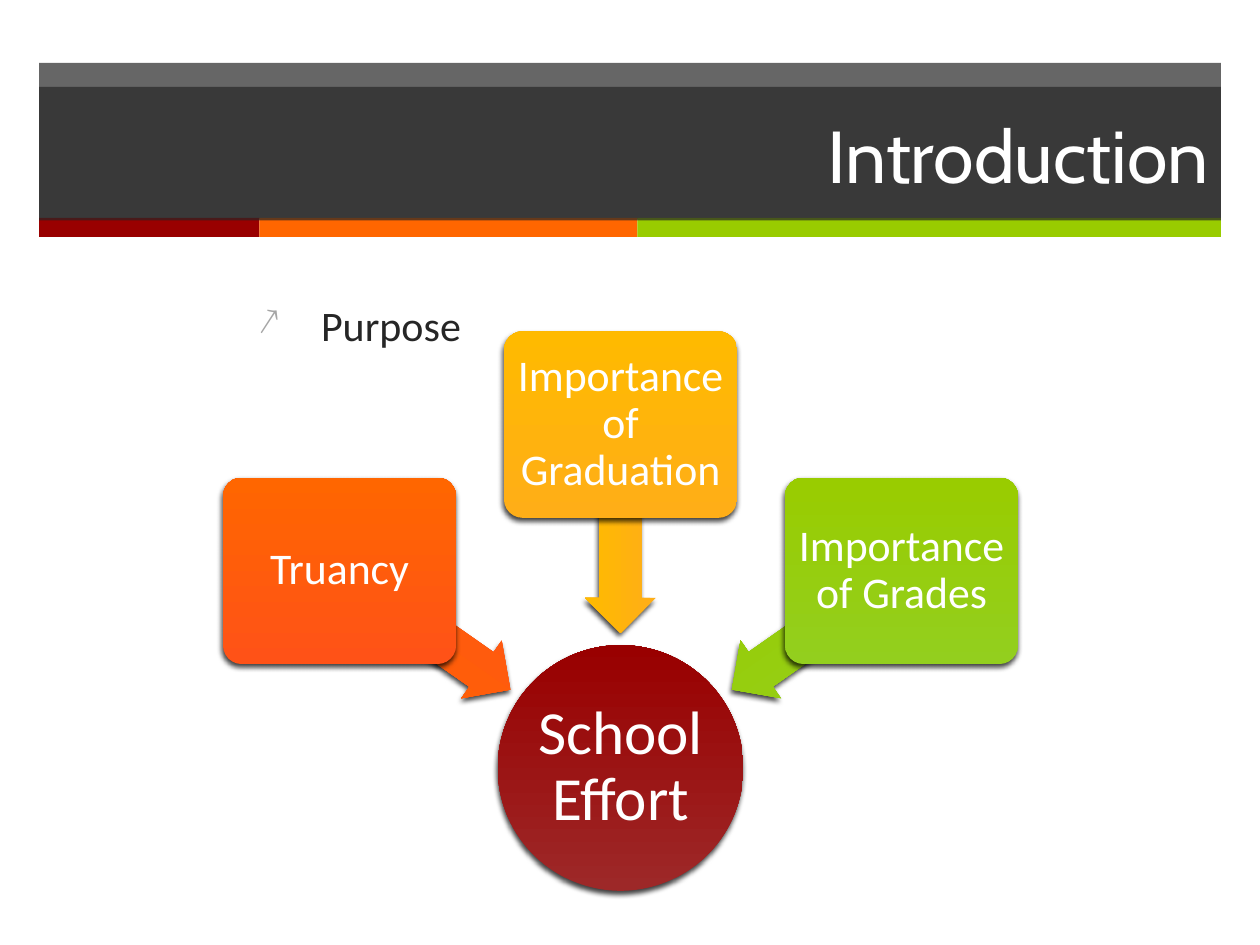
from pptx import Presentation
from pptx.dml.color import RGBColor
from pptx.enum.shapes import MSO_SHAPE
from pptx.enum.text import MSO_ANCHOR, PP_ALIGN
from pptx.oxml import parse_xml
from pptx.oxml.ns import nsdecls
from pptx.util import Inches, Pt

RECT, ROUND = MSO_SHAPE.RECTANGLE, MSO_SHAPE.ROUNDED_RECTANGLE
ELLIPSE, ARROW = MSO_SHAPE.OVAL, MSO_SHAPE.LEFT_ARROW
MIDDLE = MSO_ANCHOR.MIDDLE
CENTER, RIGHT = PP_ALIGN.CENTER, PP_ALIGN.RIGHT
rgb = RGBColor.from_string

prs = Presentation()
prs.slide_width, prs.slide_height = Inches(10), Inches(7.5)
s = prs.slides.add_slide(prs.slide_layouts[6])


def add_shape(kind, x, y, w, h, colors, alpha=None):
    sp = s.shapes.add_shape(kind, Inches(x), Inches(y), Inches(w), Inches(h))
    sp.shadow.inherit = False
    sp.line.fill.background()
    if len(colors) == 1:
        sp.fill.solid()
        sp.fill.fore_color.rgb = rgb(colors[0])
        if alpha:
            color = sp.fill._xPr.solidFill[0]
            color.append(parse_xml(f'<a:alpha {nsdecls("a")} val="{alpha * 1000}"/>'))
    else:
        sp.fill.gradient()
        sp.fill.gradient_angle = 90
        for stop, value in zip(sp.fill.gradient_stops, colors):
            stop.color.rgb = rgb(value)
        effects = sp._element.spPr.find("{*}effectLst")
        effects.append(parse_xml(
            f'<a:outerShdw {nsdecls("a")} blurRad="{Pt(3)}" dist="{Pt(2)}" dir="6600000"'
            ' rotWithShape="0"><a:srgbClr val="000000"><a:alpha val="75000"/>'
            '</a:srgbClr></a:outerShdw>'))
    return sp


def add_text(sp, text, size, font, color, align, inset=None):
    tf = sp.text_frame
    tf.word_wrap = True
    if inset is not None:
        tf.margin_left = tf.margin_right = tf.margin_top = tf.margin_bottom = Inches(inset)
        tf.paragraphs[0].line_spacing = 0.9
    p = tf.paragraphs[0]
    p.alignment = align
    r = p.add_run()
    r.text = text
    r.font.size = Pt(size)
    r.font.name = font
    r.font.color.rgb = rgb(color)


add_shape(RECT, 0.31, 0.5, 9.38, 1.24, ["262626"], 70)
x = 0.31
for width, color in [(1.75, "990000"), (3, "FF6600"), (4.63, "99CC00")]:
    add_shape(RECT, x, 1.73, width, 0.15, [color])
    x += width

title = add_shape(RECT, 0.31, 0.69, 9.38, 1.06, ["262626"], 70)
title.text_frame.vertical_anchor = MIDDLE
add_text(title, "Introduction", 42, "Cabin", "FFFFFF", RIGHT)

body = s.shapes.add_textbox(Inches(1.95), Inches(2.33), Inches(7.74), Inches(4.37))
pPr = body.text_frame.paragraphs[0]._p.get_or_add_pPr()
pPr.set("marL", str(Inches(0.5)))
pPr.set("indent", str(-Inches(0.5)))
for bullet in ['buClr {}><a:srgbClr val="A6A6A6"/></a:buClr>',
               'buSzPct {} val="90000"/>', 'buChar {} char="↗"/>']:
    pPr.append(parse_xml("<a:" + bullet.format(nsdecls("a"))))
add_text(body, "Purpose", 24, "Calibri", "262626", None)

hub = add_shape(ELLIPSE, 3.95, 5.12, 1.95, 1.95, ["9D2828", "990000"])
hub.text_frame.vertical_anchor = MIDDLE
add_text(hub, "School Effort", 35, "Calibri", "FFFFFF", CENTER, 0.02)

causes = [
    ("Truancy", 1.77, 3.79, 2.55, 4.72, 215, ["FF5217", "FF6600"]),
    ("Importance of Graduation", 4, 2.63, 4.1, 3.92, 270, ["FFAE17", "FFBA00"]),
    ("Importance of Grades", 6.23, 3.79, 5.66, 4.72, 325, ["93CF1E", "99CC00"]),
]
for text, x, y, arrow_x, arrow_y, angle, colors in causes:
    arrow = add_shape(ARROW, arrow_x, arrow_y, 1.65, 0.56, colors)
    arrow.adjustments[0], arrow.adjustments[1] = 0.6, 0.5
    arrow.rotation = angle
    box = add_shape(ROUND, x, y, 1.85, 1.48, colors)
    box.adjustments[0] = 0.1
    box.text_frame.vertical_anchor = MIDDLE
    add_text(box, text, 25, "Calibri", "FFFFFF", CENTER, 0.05)

prs.save("out.pptx")
